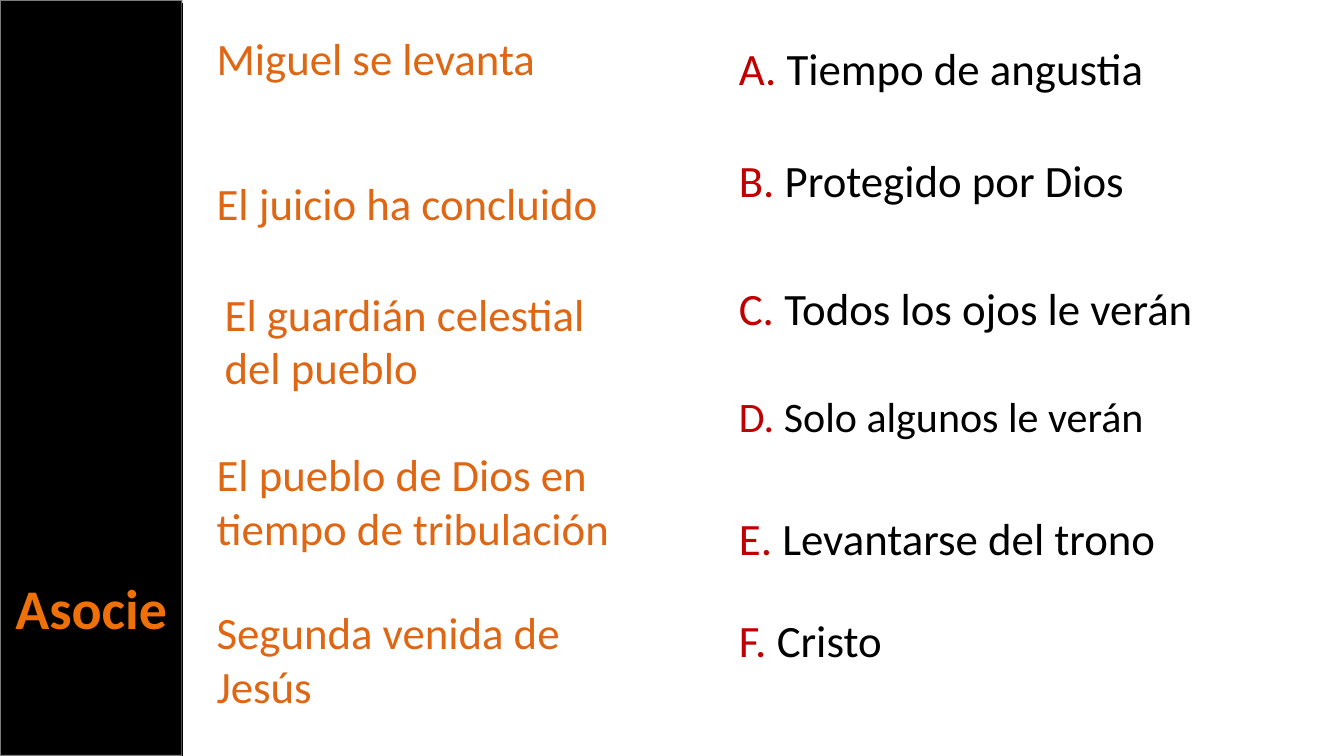
"""Build a matching exercise slide with a black title sidebar."""
import lxml.etree
import pptx
import pptx.dml.color
import pptx.enum.shapes
import pptx.enum.text
import pptx.oxml.ns
import pptx.util
from pptx.util import Inches

COLORS = {"sidebar": "000000", "outline": "F9F9F9", "title": "EE7008",
          "concept": "DF6613", "letter": "C00000", "answer": "000000"}
SIDEBAR_WIDTH = 1.81
CONCEPTS = [
    ("Miguel se levanta", 2.05, 0.26, 4.59, 0.64),
    ("El juicio ha concluido", 2.05, 1.69, 4.21, 0.64),
    ("El guardián celestial del pueblo", 2.13, 2.79, 4.13, 1.18),
    ("El pueblo de Dios en tiempo de tribulación", 2.05, 4.38, 4.39, 1.18),
    ("Segunda venida de Jesús", 2.05, 5.95, 4.59, 1.18),
]
ANSWERS = [
    ("A. ", "Tiempo de angustia", 0.35, 5, 0.64, 32),
    ("B. ", "Protegido por Dios", 1.47, 4.53, 0.64, 32),
    ("C. ", "Todos los ojos le verán", 2.74, 4.87, 0.64, 32),
    ("D. ", "Solo algunos le verán", 3.82, 4.69, 0.61, 30),
    ("E. ", "Levantarse del trono", 5.02, 5.59, 0.64, 32),
    ("F. ", "Cristo", 6.03, 5.59, 0.64, 32),
]


def rgb(part):
    return pptx.dml.color.RGBColor.from_string(COLORS[part])


def write_runs(frame, size, runs, bold=False):
    frame.word_wrap = True
    frame.auto_size = pptx.enum.text.MSO_AUTO_SIZE.SHAPE_TO_FIT_TEXT
    frame.vertical_anchor = pptx.enum.text.MSO_ANCHOR.TOP
    for text, part in runs:
        run = frame.paragraphs[0].add_run()
        run.text = text
        run.font.name = "Calibri"
        run.font.size = pptx.util.Pt(size)
        run.font.bold = bold
        run.font.color.rgb = rgb(part)


deck = pptx.Presentation()
deck.slide_width = Inches(13.33)
deck.slide_height = Inches(7.5)
slide = deck.slides.add_slide(deck.slide_layouts[5])

sidebar = slide.shapes.add_shape(pptx.enum.shapes.MSO_SHAPE.RECTANGLE,
                                 0, 0, Inches(SIDEBAR_WIDTH), Inches(7.5))
sidebar.shadow.inherit = False
sidebar.fill.solid()
sidebar.fill.fore_color.rgb = rgb("sidebar")
sidebar.line.color.rgb = rgb("outline")
sidebar.line.width = pptx.util.Pt(1.35)
outline_color = sidebar.element.find(".//" + pptx.oxml.ns.qn("a:ln")).find(
    ".//" + pptx.oxml.ns.qn("a:srgbClr"))
lxml.etree.SubElement(outline_color, pptx.oxml.ns.qn("a:alpha"), val="50000")

title = slide.shapes.title
title.element.addprevious(sidebar.element)
title.left, title.top = Inches(0), Inches(5.64)
title.width, title.height = Inches(SIDEBAR_WIDTH), Inches(0.77)
write_runs(title.text_frame, 40, [("Asocie", "title")], bold=True)
title.text_frame.paragraphs[0].alignment = pptx.enum.text.PP_ALIGN.CENTER

for text, left, top, width, height in CONCEPTS:
    concept = slide.shapes.add_textbox(Inches(left), Inches(top), Inches(width), Inches(height))
    write_runs(concept.text_frame, 32, [(text, "concept")])

for letter, text, top, width, height, size in ANSWERS:
    answer = slide.shapes.add_textbox(Inches(7.23), Inches(top), Inches(width), Inches(height))
    write_runs(answer.text_frame, size, [(letter, "letter"), (text, "answer")])

edge = slide.shapes.add_connector(pptx.enum.shapes.MSO_CONNECTOR.STRAIGHT,
                                  Inches(SIDEBAR_WIDTH), Inches(0.03),
                                  Inches(SIDEBAR_WIDTH), Inches(7.5))
edge.line.color.rgb = rgb("sidebar")
edge.line.width = pptx.util.Pt(0.85)
lxml.etree.SubElement(edge.element.spPr, pptx.oxml.ns.qn("a:effectLst"))

deck.save("out.pptx")
